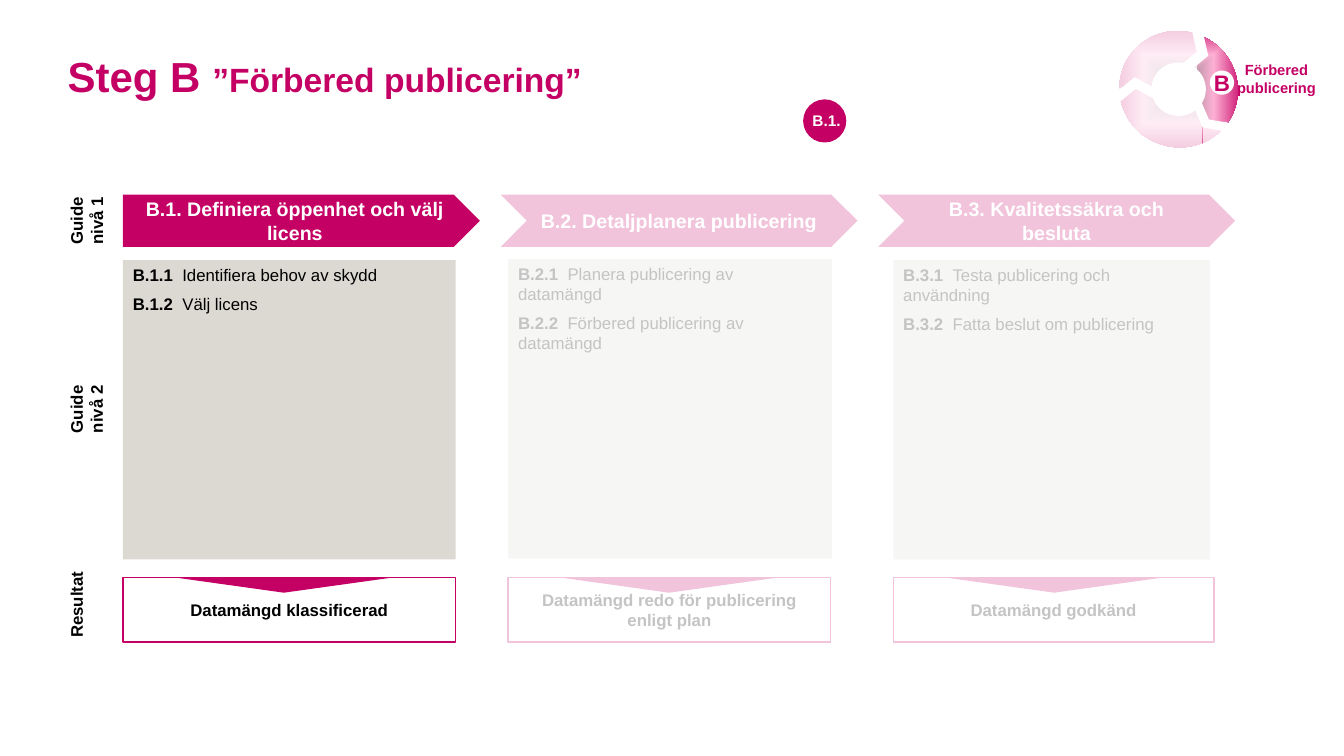
from dataclasses import dataclass

from lxml.etree import SubElement
from pptx import Presentation
from pptx.dml.color import RGBColor
from pptx.enum.shapes import MSO_SHAPE
from pptx.enum.text import MSO_ANCHOR, PP_ALIGN
from pptx.oxml import parse_xml
from pptx.oxml.ns import nsdecls, qn
from pptx.util import Inches, Pt


@dataclass(frozen=True)
class Theme:
    """Colours, font and type sizes of the slide."""
    accent: str = "C40064"
    panel: str = "DCD9D2"
    ink: str = "000000"
    white: str = "FFFFFF"
    ring: tuple = ((1, "808080"), (45, "FDB0D4"), (85, "C50366"))
    font: str = "Arial"
    title: float = 30
    subtitle: float = 24
    marker: float = 16
    heading: float = 14
    body: float = 12
    badge: float = 11
    label: float = 10.5
    veil: int = 77


T = Theme()
NO_INSET = {f"margin_{side}": 0 for side in ("left", "top", "right", "bottom")}
MIDDLE = {"vertical_anchor": MSO_ANCHOR.MIDDLE}
COLUMNS = [
    ("B.1. Definiera öppenhet och välj licens", (3.3, 3.3), 2.58,
     [("B.1.1", "Identifiera behov av skydd"), ("B.1.2", "Välj licens")],
     "Datamängd klassificerad"),
    ("B.2. Detaljplanera publicering", (3.21, 3.2), 2.57,
     [("B.2.1", "Planera publicering av datamängd"),
      ("B.2.2", "Förbered publicering av datamängd")],
     "Datamängd redo för publicering enligt plan"),
    ("B.3. Kvalitetssäkra och besluta", (3.14, 3.18), 2.58,
     [("B.3.1", "Testa publicering och användning"),
      ("B.3.2", "Fatta beslut om publicering")],
     "Datamängd godkänd"),
]


def assign(obj, values):
    """Set each named attribute of an object."""
    for name, value in values.items():
        setattr(obj, name, value)


def add_run(p, text, size, color, bold=True):
    """Append a formatted run to a paragraph."""
    r = p.add_run()
    r.text = text
    assign(r.font, {"name": T.font, "size": Pt(size), "bold": bold})
    r.font.color.rgb = RGBColor.from_string(color)


def write(sp, lines, size, color, align=PP_ALIGN.CENTER, **frame):
    """Write bold lines into a shape."""
    tf = sp.text_frame
    assign(tf, {"word_wrap": True, "vertical_anchor": MSO_ANCHOR.TOP, **frame})
    for i, line in enumerate(lines):
        p = tf.add_paragraph() if i else tf.paragraphs[0]
        p.alignment = align
        add_run(p, line, size, color)


def add_shape(s, kind, box, fill=None, line=None, width=1, rotation=0):
    """Add a flat preset shape in the given box."""
    sp = s.shapes.add_shape(kind, *map(Inches, box))
    sp.shadow.inherit = False
    sp.rotation = rotation
    if fill:
        sp.fill.solid()
        sp.fill.fore_color.rgb = RGBColor.from_string(fill)
    else:
        sp.fill.background()
    if line:
        sp.line.color.rgb = RGBColor.from_string(line)
        sp.line.width = Pt(width)
    else:
        sp.line.fill.background()
    return sp


def add_label(s, box, lines, size, color, rotation=0, **frame):
    """Add a text box in the given box."""
    sp = s.shapes.add_textbox(*map(Inches, box))
    sp.rotation = rotation
    write(sp, lines, size, color, **frame)


def add_veil(s, box, rotation=0):
    """Add a translucent white cover."""
    sp = add_shape(s, MSO_SHAPE.RECTANGLE, box, T.white, rotation=rotation)
    color = sp.fill._xPr.find(f".//{qn('a:srgbClr')}")
    SubElement(color, qn("a:alpha"), val=str(T.veil * 1000))


def add_title(s, box):
    """Place the two-size title."""
    sp = s.shapes.title
    assign(sp, dict(zip(("left", "top", "width", "height"), map(Inches, box))))
    write(sp, ["Steg B "], T.title, T.accent, PP_ALIGN.LEFT, **NO_INSET)
    add_run(sp.text_frame.paragraphs[0], "”Förbered publicering”", T.subtitle, T.accent)


def add_arrow(s, box, kind, heading):
    """Add a step arrow with its heading."""
    sp = add_shape(s, kind, box, T.accent)
    write(sp, [heading], T.heading, T.white, **MIDDLE)


def add_panel(s, box, items):
    """Add a panel of numbered activities."""
    sp = add_shape(s, MSO_SHAPE.RECTANGLE, box, T.panel)
    write(sp, [number for number, _ in items], T.body, T.ink, PP_ALIGN.LEFT)
    for i, (p, (_, text)) in enumerate(zip(sp.text_frame.paragraphs, items)):
        p.space_before = Pt(6 if i else 0)
        tabs = SubElement(p._p.get_or_add_pPr(), qn("a:tabLst"))
        SubElement(tabs, qn("a:tab"), pos=str(Inches(0.49)), algn="l")
        add_run(p, "\t" + text, T.body, T.ink, False)


def add_result(s, box, text):
    """Add a result frame with its downward pointer."""
    x, y, _, _ = box
    sp = add_shape(s, MSO_SHAPE.RECTANGLE, box, line=T.accent)
    write(sp, [text], T.body, T.ink, **MIDDLE)
    add_shape(s, MSO_SHAPE.ISOSCELES_TRIANGLE, (x + 0.52, y, 2.15, 0.15),
              T.accent, rotation=180)


def add_columns(s, x, y):
    """Lay out the three steps from the given corner."""
    for i, (heading, (panel_w, result_w), top, items, result) in enumerate(COLUMNS):
        left = x + 3.82 * i
        kind = MSO_SHAPE.CHEVRON if i else MSO_SHAPE.PENTAGON
        add_panel(s, (left, top, panel_w, 2.97), items)
        add_arrow(s, (x + 3.745 * i, y, 3.54, 0.52), kind, heading)
        add_result(s, (left, y + 3.8, result_w, 0.64), result)
    add_veil(s, (4.89, y - 0.13, 7.57, 4.98))


def add_row_labels(s):
    """Add the upright row labels."""
    for box, lines in (
        ((0.47, 1.97, 0.81, 0.44), ["Guide nivå 1"]),
        ((-0.61, 3.84, 2.97, 0.44), ["Guide", "nivå 2"]),
        ((0.37, 5.78, 1.01, 0.44), ["Resultat"]),
    ):
        add_label(s, box, lines, T.body, T.ink, 270, **NO_INSET)


def add_cycle(s, x, y):
    """Draw the cycle ring with step B in focus."""
    ring = add_shape(s, MSO_SHAPE.OVAL, (x, y, 1.18, 1.15), T.white, rotation=22.7)
    stops = "".join(f'<a:gs pos="{pos * 1000}"><a:srgbClr val="{color}"/></a:gs>'
                    for pos, color in T.ring)
    solid = ring._element.spPr.find(qn("a:solidFill"))
    ring._element.spPr.replace(solid, parse_xml(
        f'<a:gradFill {nsdecls("a")} rotWithShape="0"><a:gsLst>{stops}</a:gsLst>'
        '<a:path path="shape"><a:fillToRect l="50000" t="50000" r="50000" b="50000"/>'
        '</a:path></a:gradFill>'))
    add_shape(s, MSO_SHAPE.OVAL, (x + 0.32, y + 0.31, 0.54, 0.53), T.white)
    for dx, dy, w, h, angle in ((0.05, 0.4, 0.23, 0.34, 264.7),
                                (0.65, 0.01, 0.24, 0.39, 18.7),
                                (0.79, 0.69, 0.2, 0.37, 128.4)):
        add_shape(s, MSO_SHAPE.CHEVRON, (x + dx, y + dy, w, h), T.white, rotation=angle)
    marker = add_shape(s, MSO_SHAPE.OVAL, (x + 0.9, y + 0.39, 0.24, 0.24), T.white)
    write(marker, ["B"], T.marker, T.accent, **MIDDLE, **NO_INSET)
    add_label(s, (x + 0.94, y + 0.19, 1.24, 0.56), ["Förbered publicering"],
              T.label, T.accent, **MIDDLE)
    for dx, dy, w, h, angle in ((-0.18, 0.56, 1, 0.65, 0),
                                (-0.06, -0.25, 0.7, 0.96, 90),
                                (0.72, 1.01, 0.46, 0.24, 90)):
        add_veil(s, (x + dx, y + dy, w, h), angle)


def add_badge(s, x, y):
    """Add the round step badge."""
    add_shape(s, MSO_SHAPE.OVAL, (x, y, 0.4, 0.4), T.accent, T.accent, 2)
    add_label(s, (x - 0.02, y + 0.05, 0.6, 0.29), ["B.1."], T.badge, T.white,
              align=PP_ALIGN.LEFT)


def main():
    """Build and save the slide."""
    prs = Presentation()
    assign(prs, {"slide_width": Inches(13.33), "slide_height": Inches(7.5)})
    s = prs.slides.add_slide(prs.slide_layouts[5])
    add_title(s, (0.67, 0.5, 10.42, 0.91))
    add_columns(s, 1.22, 1.93)
    add_row_labels(s)
    add_cycle(s, 11.1, 0.31)
    add_badge(s, 7.98, 1)
    prs.save("out.pptx")


if __name__ == "__main__":
    main()
